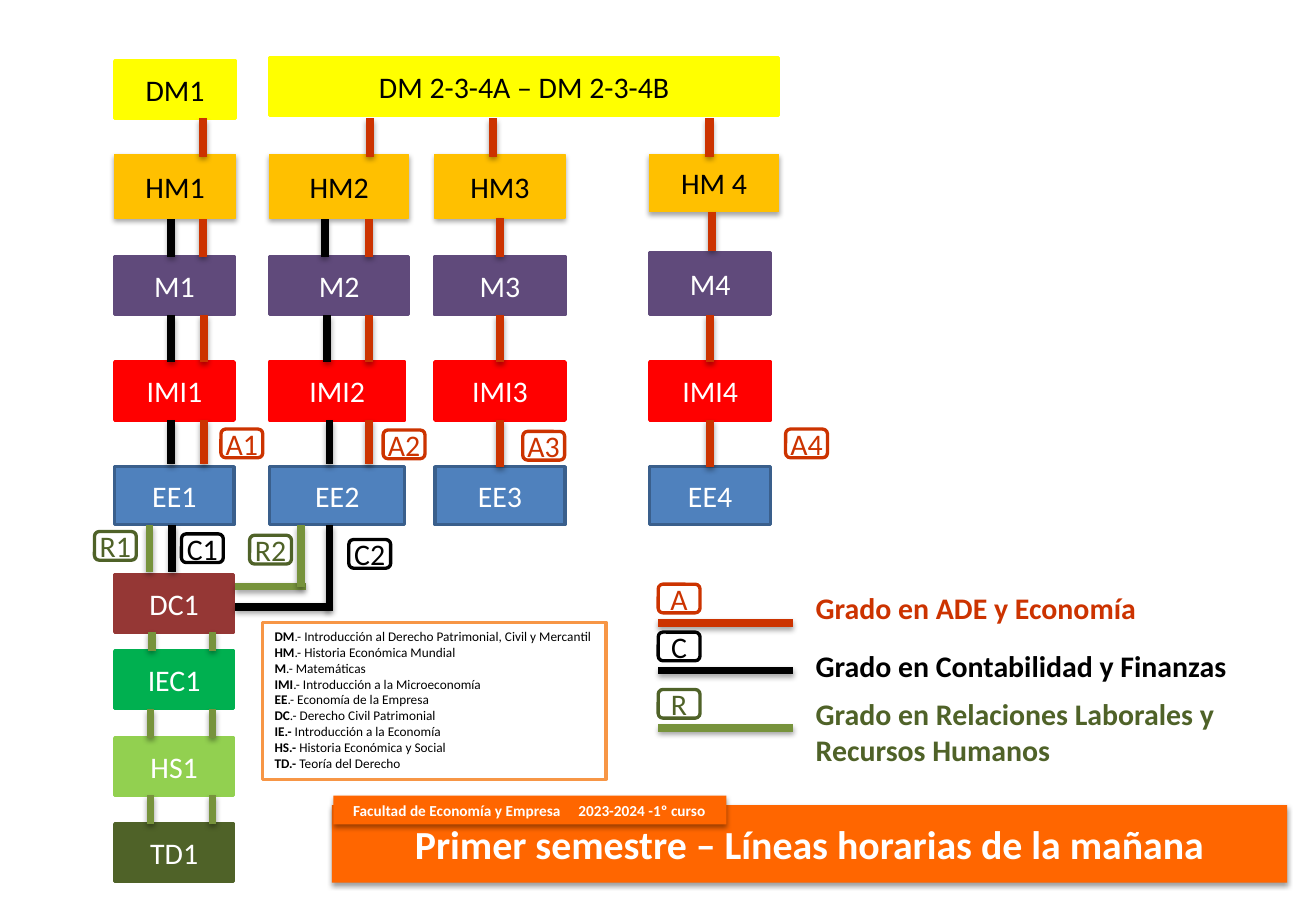
from lxml.etree import SubElement
from pptx import Presentation
from pptx.dml.color import RGBColor
from pptx.enum.shapes import MSO_CONNECTOR as LINK, MSO_SHAPE as SHAPE
from pptx.enum.text import MSO_ANCHOR as ANCHOR, PP_ALIGN as ALIGN
from pptx.oxml.ns import qn
from pptx.util import Cm, Pt

RED, BLACK, GREEN, OLIVE = "CC3300", "000000", "77933C", "4F6228"
WHITE, YELLOW, ORANGE = "FFFFFF", "FFFF00", "FF6600"
COLUMNS = (0, 3.3, 6.81, 11.38)
MORNING_ROWS = [
    ("HM", 2.06, 1.35, (2.57, 2.95, 2.77, 2.74), "FFC000", "FFC000"),
    ("M", 4.23, 1.24, (2.54, 2.95, 2.77, 2.57), "604A7B", "604A7B"),
    ("IMI", 6.47, 1.24, (2.54, 2.87, 2.77, 2.57), "FF0000", "FF0000"),
    ("EE", 8.7, 1.23, (2.54, 2.87, 2.77, 2.57), "4F81BD", "3A5F8C"),
]
ADJUSTED = {"HM4": (2.05, 1.22), "M4": (4.15, 1.32)}
LABOUR_ROWS = [("DC1", 10.99, "953735"), ("IEC1", 12.62, "00B050"),
               ("HS1", 14.47, "92D050"), ("TD1", 16.3, OLIVE)]
GAPS = {"DM-HM": (1.29, 2.1), "HM-M": (3.44, 4.23), "HM4-M4": (3.27, 4.1),
        "M-IMI": (5.48, 6.47), "IMI-EE": (7.71, 8.65), "EE-DC": (9.95, 10.94),
        "DC-IEC": (12.21, 12.61), "IEC-HS": (13.86, 14.47), "HS-TD": (15.69, 16.3)}
ROUTES = [
    (RED, "DM-HM", (1.88, 5.43, 8.05, 12.65)),
    (RED, "HM-M", (1.88, 5.41)),
    (RED, "HM4-M4", (12.7,)),
    (RED, "M-IMI", (1.9, 5.41)),
    (RED, "IMI-EE", (1.9, 5.41)),
    (BLACK, "HM-M", (1.2, 4.47)),
    (BLACK, "M-IMI", (1.2, 4.52)),
    (BLACK, "IMI-EE", (1.2, 4.57)),
    (BLACK, "EE-DC", (1.22,)),
    (GREEN, "EE-DC", (0.74,)),
    (GREEN, "DC-IEC", (0.79, 2.08)),
    (GREEN, "IEC-HS", (0.76, 2.08)),
    (GREEN, "HS-TD", (0.76, 2.08)),
]
TURNS = [
    (GREEN, (4.06, 11.25), (2.56, 11.25)), (GREEN, (3.96, 9.95), (3.96, 11.25)),
    (BLACK, (4.57, 11.68), (2.56, 11.68)), (BLACK, (4.57, 9.95), (4.57, 11.76)),
]
GROUP_TAGS = [
    ("A1", 2.26, 7.9, RED), ("A2", 5.71, 7.92, RED), ("A3", 8.68, 7.95, RED),
    ("A4", 14.27, 7.9, RED), ("C1", 1.42, 10.13, BLACK), ("C2", 4.98, 10.25, BLACK),
    ("R1", -0.43, 10.08, OLIVE), ("R2", 2.87, 10.16, OLIVE),
]
DEGREES = [
    ("A", 0, 0, 9.7, 1.04, RED, RED, "Grado en ADE y Economía"),
    ("C", 1.02, 1.22, 10.46, 1.04, BLACK, BLACK, "Grado en Contabilidad y Finanzas"),
    ("R", 2.24, 2.24, 10.46, 1.83, OLIVE, GREEN,
     "Grado en Relaciones Laborales y Recursos Humanos"),
]
SUBJECTS = [
    ("DM", ".- Introducción al Derecho Patrimonial, Civil y Mercantil"),
    ("HM", ".- Historia Económica Mundial"), ("M", ".- Matemáticas"),
    ("IMI", ".- Introducción a la Microeconomía"), ("EE", ".- Economía de la Empresa"),
    ("DC", ".- Derecho Civil Patrimonial"), ("IE.- ", "Introducción a la Economía"),
    ("HS.- ", "Historia Económica y Social"), ("TD.- ", "Teoría del Derecho"),
]


def color(code):
    """Turn a hex string into a colour."""
    return RGBColor.from_string(code)


def style(target, **values):
    """Set each given attribute on the target."""
    for name, value in values.items():
        setattr(target, name, value)


def cast_shadow(effects, opacity):
    """Add a soft shadow below to an effect list."""
    shadow = SubElement(effects, qn("a:outerShdw"), blurRad="40000", dist="23000",
                        dir="5400000", rotWithShape="0")
    tint = SubElement(shadow, qn("a:srgbClr"), val=BLACK)
    SubElement(tint, qn("a:alpha"), val=str(opacity * 1000))


def write(paragraph, text, size, ink, bold=False):
    """Add one formatted run to a paragraph."""
    run = paragraph.add_run()
    run.text = text
    style(run.font, name="Calibri", size=Pt(size), bold=bold)
    run.font.color.rgb = color(ink)


def block(slide, box, fill, border, width=2, shadow=0, kind=SHAPE.RECTANGLE):
    """Draw a box with optional fill, border and shadow."""
    shape = slide.shapes.add_shape(kind, *map(Cm, box))
    if fill:
        shape.fill.solid()
        shape.fill.fore_color.rgb = color(fill)
    else:
        shape.fill.background()
    if border:
        shape.line.color.rgb = color(border)
        shape.line.width = Pt(width)
    else:
        shape.line.fill.background()
    shape.shadow.inherit = False
    if shadow:
        cast_shadow(shape.element.spPr.find(qn("a:effectLst")), shadow)
    style(shape.text_frame, word_wrap=True, vertical_anchor=ANCHOR.MIDDLE)
    shape.text_frame.paragraphs[0].alignment = ALIGN.CENTER
    return shape


def course(slide, box, label, fill, border, ink=WHITE, **look):
    """Draw one labelled course box."""
    shape = block(slide, box, fill, border, **look)
    write(shape.text_frame.paragraphs[0], label, 18, ink)
    return shape


def tag(slide, left, top, label, ink):
    """Draw a small rounded group label."""
    shape = course(slide, (left, top, 0.89, 0.61), label, None, ink, ink,
                   kind=SHAPE.ROUNDED_RECTANGLE)
    style(shape.text_frame, margin_left=0, margin_right=0,
          margin_top=Cm(0.1), margin_bottom=Cm(0.1))


def track(slide, start, end, ink):
    """Draw a thick timetable line."""
    link = slide.shapes.add_connector(LINK.STRAIGHT, *map(Cm, start + end))
    link.line.color.rgb = color(ink)
    link.line.width = Pt(5 if ink == RED else 4.5)
    cast_shadow(SubElement(link.element.spPr, qn("a:effectLst")), 35)
    return link


def timetable(slide, left, top):
    """Place the courses, their lines and their group labels."""
    course(slide, (left, top + 0.07, 2.57, 1.22), "DM1", YELLOW, YELLOW, BLACK)
    course(slide, (left + COLUMNS[1], top, 10.82, 1.23),
           "DM 2-3-4A – DM 2-3-4B", YELLOW, YELLOW, BLACK)
    courses = {}
    for subject, row_top, row_height, widths, fill, border in MORNING_ROWS:
        look = dict(ink=BLACK, width=0.75, shadow=35) if subject == "HM" else {}
        for group, (column, width) in enumerate(zip(COLUMNS, widths), 1):
            code = f"{subject}{group}"
            y, height = ADJUSTED.get(code, (row_top, row_height))
            label = "HM 4" if code == "HM4" else code
            courses[code] = course(slide, (left + column, top + y, width, height),
                                   label, fill, border, **look)
    for label, y, fill in LABOUR_ROWS:
        course(slide, (left, top + y, 2.53, 1.23), label, fill, fill)

    for ink, gap, offsets in ROUTES:
        start, end = GAPS[gap]
        for x in offsets:
            track(slide, (left + x, top + start), (left + x, top + end), ink)
    for upper, lower in [("HM3", "M3"), ("M3", "IMI3"), ("IMI3", "EE3"),
                         ("M4", "IMI4"), ("IMI4", "EE4")]:
        joined = track(slide, (left, top), (left, top), RED)
        joined.begin_connect(courses[upper], 2)
        joined.end_connect(courses[lower], 0)
    for ink, (x1, y1), (x2, y2) in TURNS:
        track(slide, (left + x1, top + y1), (left + x2, top + y2), ink)
    for label, x, y, ink in GROUP_TAGS:
        tag(slide, left + x, top + y, label, ink)


def degree_legend(slide, left, top):
    """Place the legend of degrees and line colours."""
    for letter, tag_top, name_top, width, height, ink, line_ink, degree in DEGREES:
        line_top = top + tag_top + 0.82
        track(slide, (left, line_top), (left + 2.87, line_top), line_ink)
        tag(slide, left, top + tag_top, letter, ink)
        name = slide.shapes.add_textbox(*map(Cm, (left + 3.1, top + name_top, width, height)))
        name.text_frame.word_wrap = True
        write(name.text_frame.paragraphs[0], degree, 18, ink, True)


def subject_key(slide, left, top):
    """Place the list of subject abbreviations."""
    frame = block(slide, (left, top, 7.3, 3.34), WHITE, "F79646").text_frame
    frame.vertical_anchor = ANCHOR.TOP
    for index, (code, meaning) in enumerate(SUBJECTS):
        entry = frame.add_paragraph() if index else frame.paragraphs[0]
        entry.alignment = ALIGN.LEFT
        write(entry, code, 8, BLACK, True)
        write(entry, meaning, 8, BLACK)


def title_band(slide, left, top):
    """Place the title band and the faculty strip above it."""
    band = block(slide, (left, top + 0.2, 20.32, 1.65), ORANGE, None, shadow=38)
    write(band.text_frame.paragraphs[0],
          "Primer semestre – Líneas horarias de la mañana", 24, WHITE, True)
    strip = block(slide, (left + 0.03, top, 8.36, 0.61), ORANGE, None, shadow=38)
    strip.text_frame.margin_left = Cm(0.42)
    faculty = strip.text_frame.paragraphs[0]
    faculty.alignment = ALIGN.LEFT
    stops = SubElement(faculty._p.get_or_add_pPr(), qn("a:tabLst"))
    SubElement(stops, qn("a:tab"), pos=str(Cm(4.79)), algn="l")
    write(faculty, "Facultad de Economía y Empresa\t2023-2024 -1º curso", 9.2, WHITE, True)


def main():
    """Build and save the slide."""
    deck = Presentation()
    style(deck, slide_width=Cm(27.99), slide_height=Cm(19.51))
    slide = deck.slides.add_slide(deck.slide_layouts[6])
    timetable(slide, 2.44, 1.23)
    degree_legend(slide, 14, 12.43)
    title_band(slide, 7.06, 16.93)
    subject_key(slide, 5.59, 13.24)
    deck.save("out.pptx")


if __name__ == "__main__":
    main()
